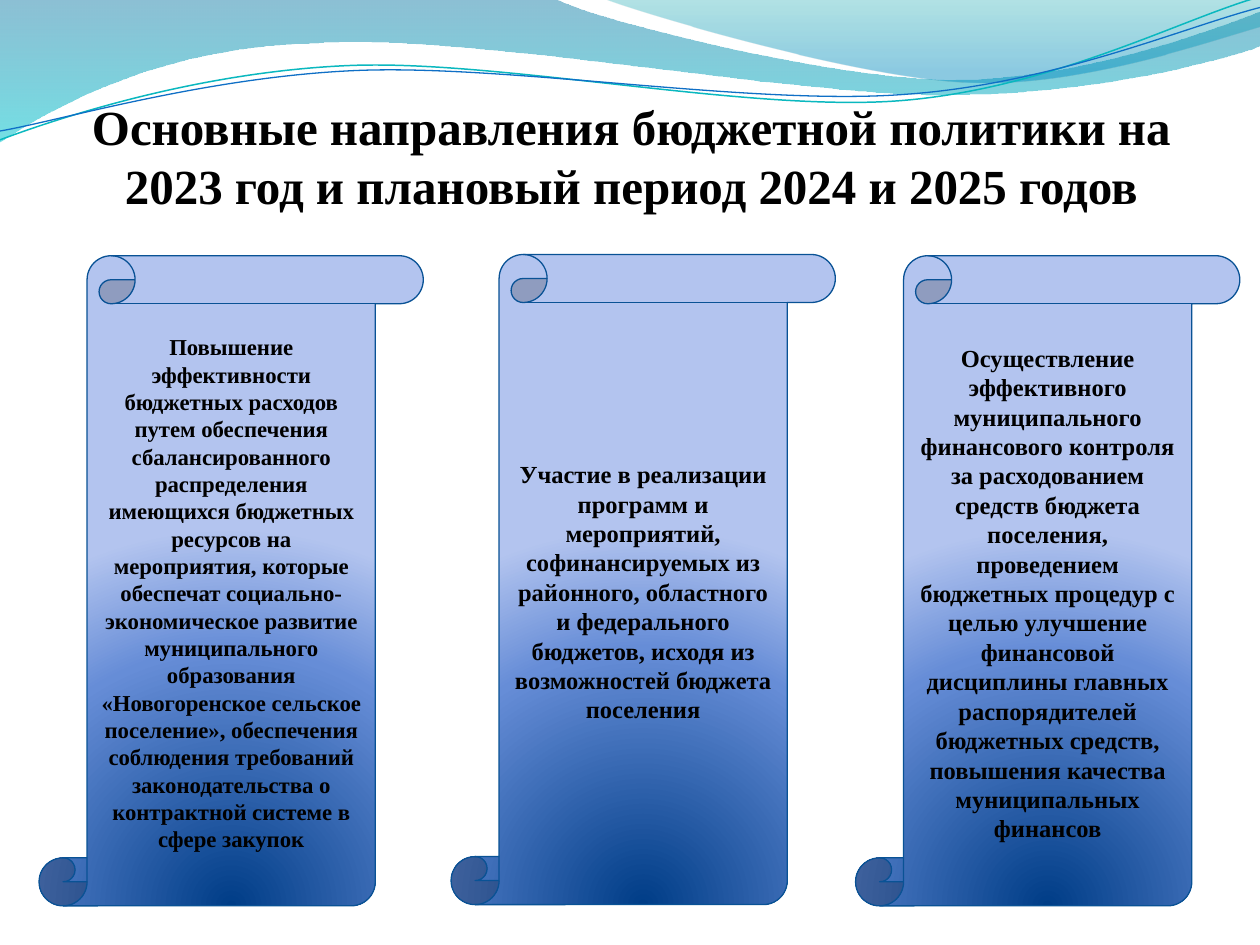
from math import cos, radians, sin

from pptx import Presentation
from pptx.dml.color import RGBColor
from pptx.enum.shapes import MSO_SHAPE as Shape
from pptx.enum.text import MSO_ANCHOR as Anchor, MSO_AUTO_SIZE as AutoSize, PP_ALIGN as Align
from pptx.oxml import parse_xml
from pptx.oxml.ns import nsdecls, qn
from pptx.util import Inches, Pt

COLORS = {
    "black": "000000", "teal": "0AB8BF", "blue": "0F6FC6", "edge": "095295",
    "navy": "003D87", "mid": "668DD7", "pale": "B3C4EF",
    "ocean": "0074A1", "aqua": "00C6CF", "green": "00A1A9", "sky": "008BBF",
}
TITLE = "Основные направления бюджетной политики на 2023 год и плановый период 2024 и 2025 годов"
SCROLLS = [
    (0.31, 2.03, 13, "Повышение эффективности бюджетных расходов путем обеспечения "
     "сбалансированного распределения имеющихся бюджетных ресурсов на мероприятия, которые "
     "обеспечат социально- экономическое развитие муниципального образования «Новогоренское "
     "сельское поселение», обеспечения соблюдения требований законодательства о контрактной "
     "системе в сфере закупок"),
    (3.58, 2.02, 14, "Участие в реализации программ и мероприятий, софинансируемых из "
     "районного, областного и федерального бюджетов, исходя из возможностей бюджета поселения"),
    (6.79, 2.03, 14, "Осуществление эффективного муниципального финансового контроля за "
     "расходованием средств бюджета поселения, проведением бюджетных процедур с целью улучшение "
     "финансовой дисциплины главных распорядителей бюджетных средств, повышения качества "
     "муниципальных финансов"),
]
SCROLL_STOPS = [(0, "navy", 100), (68, "mid", 100), (100, "pale", 100)]
DOWN = '<a:lin ang="5400000" scaled="1"/>'
FROM_BELOW = ('<a:path path="circle">'
              '<a:fillToRect l="50000" t="130000" r="50000" b="-30000"/></a:path>')
WAVES = [
    ([(0, 0), (4.4, -0.01), (4.76, 0.17, 6.64, 0.63, 7.58, 0.63),
      (8.53, 0.63, 9.58, 0.26, 10, 0.09), (10.01, 0.36),
      (9.83, 0.44, 8.7, 0.76, 7.46, 0.75), (6.22, 0.75, 3.82, 0.28, 2.57, 0.34),
      (1.29, 0.36, 0.46, 0.83, -0.01, 1.13), (0, 0)],
     [(0, "ocean", 45), (100, "aqua", 55)]),
    ([(4.79, -0.01), (5.09, 0.11, 6.82, 0.62, 7.69, 0.65),
      (8.56, 0.69, 9.61, 0.32, 10, 0.21), (10, 0), (4.79, -0.01)],
     [(0, "green", 30), (80, "sky", 45)]),
]
RIBBONS = [
    ([(0, 1.11), (0.48, 0.93, 1.58, 0.57, 2.77, 0.52), (3.95, 0.47, 5.93, 0.89, 7.13, 0.8),
      (8.33, 0.71, 9.38, 0.15, 9.98, -0.02)], (4.99, 0.58), "teal", 0.85),
    ([(0, 1.04), (0.47, 0.96, 1.64, 0.61, 2.83, 0.56), (4.03, 0.51, 5.97, 0.84, 7.17, 0.75),
      (8.36, 0.67, 9.41, 0.21, 10, 0.06)], (5, 0.59), "blue", 0.75),
]
RIBBON_TILT = -2.7


def color(name):
    return RGBColor.from_string(COLORS[name])


def turn(point, center, angle):
    across, down = point[0] - center[0], point[1] - center[1]
    c, s = cos(radians(angle)), sin(radians(angle))
    return center[0] + across * c - down * s, center[1] + across * s + down * c


def add_outline(page, segments, close, center=(0, 0), tilt=0):
    points = [turn(pair, center, -tilt) for segment in segments
              for pair in zip(segment[::2], segment[1::2])]
    start, *rest = [(Inches(x), Inches(y)) for x, y in points]
    builder = page.shapes.build_freeform(*start)
    builder.add_line_segments(rest, close=close)
    outline = builder.convert_to_shape()
    outline.rotation = tilt
    outline.shadow.inherit = False
    lines = iter(list(outline.element.iter(qn("a:lnTo"))))
    for segment in segments[1:]:
        line = next(lines)
        if len(segment) == 6:
            curve = parse_xml(f'<a:cubicBezTo {nsdecls("a")}/>')
            line.addprevious(curve)
            for part in (line, next(lines), next(lines)):
                curve.append(part[0])
                part.getparent().remove(part)
    return outline


def set_gradient(shape, stops, direction):
    marks = "".join(f'<a:gs pos="{place * 1000}"><a:srgbClr val="{COLORS[name]}">'
                    f'<a:alpha val="{alpha * 1000}"/></a:srgbClr></a:gs>'
                    for place, name, alpha in stops)
    shape.element.spPr.insert(2, parse_xml(
        f'<a:gradFill {nsdecls("a")} rotWithShape="1"><a:gsLst>{marks}</a:gsLst>'
        f'{direction}</a:gradFill>'))


def set_line(shape, name, width):
    shape.line.color.rgb = color(name)
    shape.line.width = Pt(width)


def write(box, text, size, frame_format):
    frame = box.text_frame
    for name, value in {"word_wrap": True, "auto_size": AutoSize.NONE, **frame_format}.items():
        setattr(frame, name, value)
    para = frame.paragraphs[0]
    para.alignment = Align.CENTER
    span = para.add_run()
    span.text = text
    for name, value in {"name": "Times New Roman", "size": Pt(size), "bold": True}.items():
        setattr(span.font, name, value)
    span.font.color.rgb = color("black")


def main():
    """Build the slide on the main directions of budget policy."""
    deck = Presentation()
    deck.slide_width, deck.slide_height = Inches(10), Inches(7.5)
    page = deck.slides.add_slide(deck.slide_layouts[5])

    for segments, stops in WAVES:
        wave = add_outline(page, segments, True)
        set_gradient(wave, stops, DOWN)
        wave.line.fill.background()
    for segments, center, name, width in RIBBONS:
        ribbon = add_outline(page, segments, False, center, RIBBON_TILT)
        ribbon.fill.background()
        set_line(ribbon, name, width)

    title = page.shapes.title
    title.element.getparent().append(title.element)
    for name, value in {"left": 0.51, "top": 0.6, "width": 9, "height": 1.1}.items():
        setattr(title, name, Inches(value))
    write(title, TITLE, 28, {"vertical_anchor": Anchor.BOTTOM, "margin_left": 0,
                             "margin_right": 0, "margin_top": Inches(0.05),
                             "margin_bottom": 0})

    for left, top, size, text in SCROLLS:
        scroll = page.shapes.add_shape(Shape.VERTICAL_SCROLL, Inches(left), Inches(top),
                                       Inches(3.05), Inches(5.16))
        set_gradient(scroll, SCROLL_STOPS, FROM_BELOW)
        set_line(scroll, "edge", 0.75)
        scroll.shadow.inherit = False
        write(scroll, text, size, {"vertical_anchor": Anchor.MIDDLE})

    deck.save("out.pptx")


if __name__ == "__main__":
    main()
